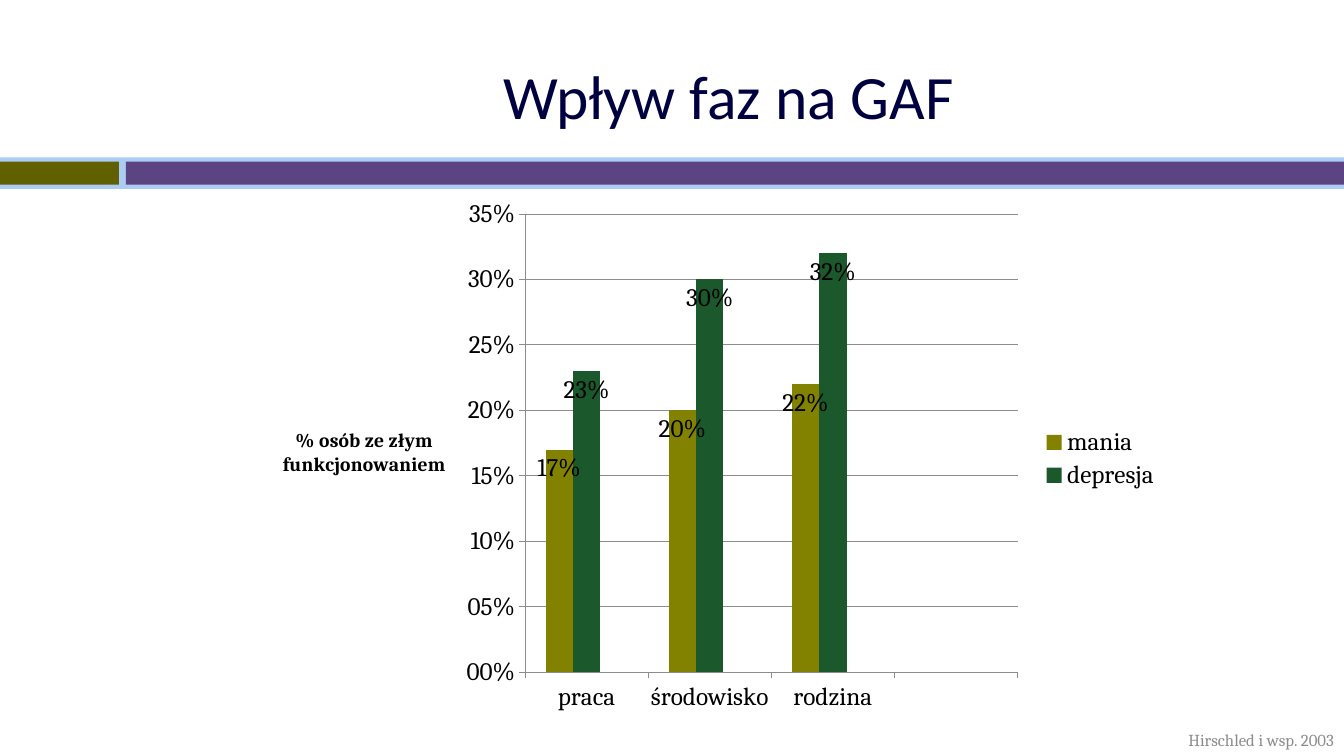
from lxml import etree
from pptx import Presentation
from pptx.chart.data import CategoryChartData
from pptx.dml.color import RGBColor
from pptx.enum import chart as kinds, shapes, text
from pptx.util import Pt

SKY = RGBColor(0xAB, 0xCD, 0xF4)
MOSS = RGBColor(0x60, 0x60, 0x00)
PLUM = RGBColor(0x5C, 0x43, 0x81)
NAVY = RGBColor(0x00, 0x00, 0x40)
OLIVE = RGBColor(0x82, 0x82, 0x00)
GREEN = RGBColor(0x1B, 0x58, 0x2B)
BLUE = RGBColor(0x00, 0x9F, 0xEC)
GREY = RGBColor(0x8C, 0x8C, 0x8C)
BLACK = RGBColor(0, 0, 0)

PERCENT = "#,#00%"
C = "{http://schemas.openxmlformats.org/drawingml/2006/chart}"
GROUPS = ["praca", "środowisko", "rodzina", ""]
SERIES = [
    ("mania", (0.17, 0.2, 0.22, None), OLIVE),
    ("depresja", (0.23, 0.3, 0.32, None), GREEN),
    ("Series 3", (None,) * 4, BLUE),
]


def style(font, name, size, color, bold=False):
    font.name, font.size, font.bold = name, Pt(size), bold
    font.color.rgb = color


def add_band(slide, left, top, width, height, color):
    band = slide.shapes.add_shape(shapes.MSO_SHAPE.RECTANGLE,
                                  Pt(left), Pt(top), Pt(width), Pt(height))
    band.shadow.inherit = False
    band.fill.solid()
    band.fill.fore_color.rgb = color
    band.line.fill.background()


def set_title(slide, words):
    title = slide.shapes.title
    title.left, title.top, title.width, title.height = Pt(88.5), Pt(22.5), Pt(864), Pt(90)
    frame = title.text_frame
    frame.text = words
    frame.vertical_anchor = text.MSO_ANCHOR.MIDDLE
    para = frame.paragraphs[0]
    para.alignment = text.PP_ALIGN.CENTER
    style(para.font, "Calibri", 44, NAVY)


def add_credit(slide, words):
    box = slide.shapes.add_textbox(Pt(657.5), Pt(517.5), Pt(302.5), Pt(22.5))
    frame = box.text_frame
    frame.word_wrap = True
    frame.vertical_anchor = text.MSO_ANCHOR.MIDDLE
    para = frame.paragraphs[0]
    para.text = words
    para.alignment = text.PP_ALIGN.RIGHT
    style(para.font, "Cambria", 12, GREY)


def place(part, index, inner=False, **spots):
    """Fix the position of a chart part, in fractions of the chart."""
    for old in part.findall(C + "layout"):
        part.remove(old)
    layout = etree.Element(C + "layout")
    part.insert(index, layout)
    manual = etree.SubElement(layout, C + "manualLayout")
    if inner:
        etree.SubElement(manual, C + "layoutTarget", val="inner")
    for key in "xy":
        etree.SubElement(manual, C + key + "Mode", val="edge")
    for key, value in spots.items():
        etree.SubElement(manual, C + key, val=str(value))


def style_axis(axis):
    axis.major_tick_mark = kinds.XL_TICK_MARK.OUTSIDE
    axis.minor_tick_mark = kinds.XL_TICK_MARK.NONE
    axis.format.line.color.rgb = GREY
    axis.format.line.width = Pt(0.75)


def name_axis(axis, words):
    title = axis.axis_title
    frame = title.text_frame
    frame.text = words
    style(frame.paragraphs[0].font, "Cambria", 14, BLACK, True)
    root = title._element
    body = root.xpath(".//a:bodyPr")[0]
    body.set("rot", "0")
    body.set("vert", "horz")
    place(root, 1, x=0.02, y=0.44)


def add_legend(chart):
    chart.has_legend = True
    legend = chart.legend
    legend.position = kinds.XL_LEGEND_POSITION.RIGHT
    legend.include_in_layout = False
    root = legend._element
    entry = etree.Element(C + "legendEntry")
    etree.SubElement(entry, C + "idx", val="2")
    etree.SubElement(entry, C + "delete", val="1")
    root.insert(1, entry)
    place(root, 2, x=0.86, y=0.44, w=0.13, h=0.13)


def add_bars(slide):
    data = CategoryChartData(number_format=PERCENT)
    data.categories = GROUPS
    for name, values, _ in SERIES:
        data.add_series(name, values)
    chart = slide.shapes.add_chart(kinds.XL_CHART_TYPE.COLUMN_CLUSTERED, Pt(186.5),
                                   Pt(135.4), Pt(648), Pt(380.9), data).chart
    chart.has_title = False
    style(chart.font, "Cambria", 18, BLACK)

    # Columns and labels
    plot = chart.plots[0]
    plot.gap_width, plot.overlap, plot.vary_by_categories = 150, 0, False
    for bars, (_, _, color) in zip(plot.series, SERIES):
        bars.format.fill.solid()
        bars.format.fill.fore_color.rgb = color
        tags = bars.data_labels
        tags.show_value = True
        tags.position = kinds.XL_LABEL_POSITION.INSIDE_END
        tags.number_format, tags.number_format_is_linked = PERCENT, False

    # Axes
    style_axis(chart.category_axis)
    axis = chart.value_axis
    style_axis(axis)
    axis.minimum_scale, axis.maximum_scale, axis.major_unit = 0, 0.35, 0.05
    axis.tick_labels.number_format = PERCENT
    axis.tick_labels.number_format_is_linked = False
    axis.has_major_gridlines = True
    axis.major_gridlines.format.line.color.rgb = GREY
    axis.major_gridlines.format.line.width = Pt(0.75)
    name_axis(axis, "% osób ze złym funkcjonowaniem")

    # Arrangement
    add_legend(chart)
    area = chart._chartSpace.xpath(".//c:plotArea")[0]
    place(area, 0, True, x=0.291, y=0.046, w=0.543, h=0.859)


def main():
    deck = Presentation()
    deck.slide_width, deck.slide_height = Pt(960), Pt(540)
    slide = deck.slides.add_slide(deck.slide_layouts[5])

    # Bands under the title
    add_band(slide, 0, 112.5, 960, 22.5, SKY)
    add_band(slide, 0, 115.5, 85, 16.5, MOSS)
    add_band(slide, 90, 115.5, 870, 16.5, PLUM)

    # Content
    set_title(slide, "Wpływ faz na GAF")
    add_bars(slide)
    add_credit(slide, "Hirschled i wsp. 2003")
    deck.save("out.pptx")


if __name__ == "__main__":
    main()
